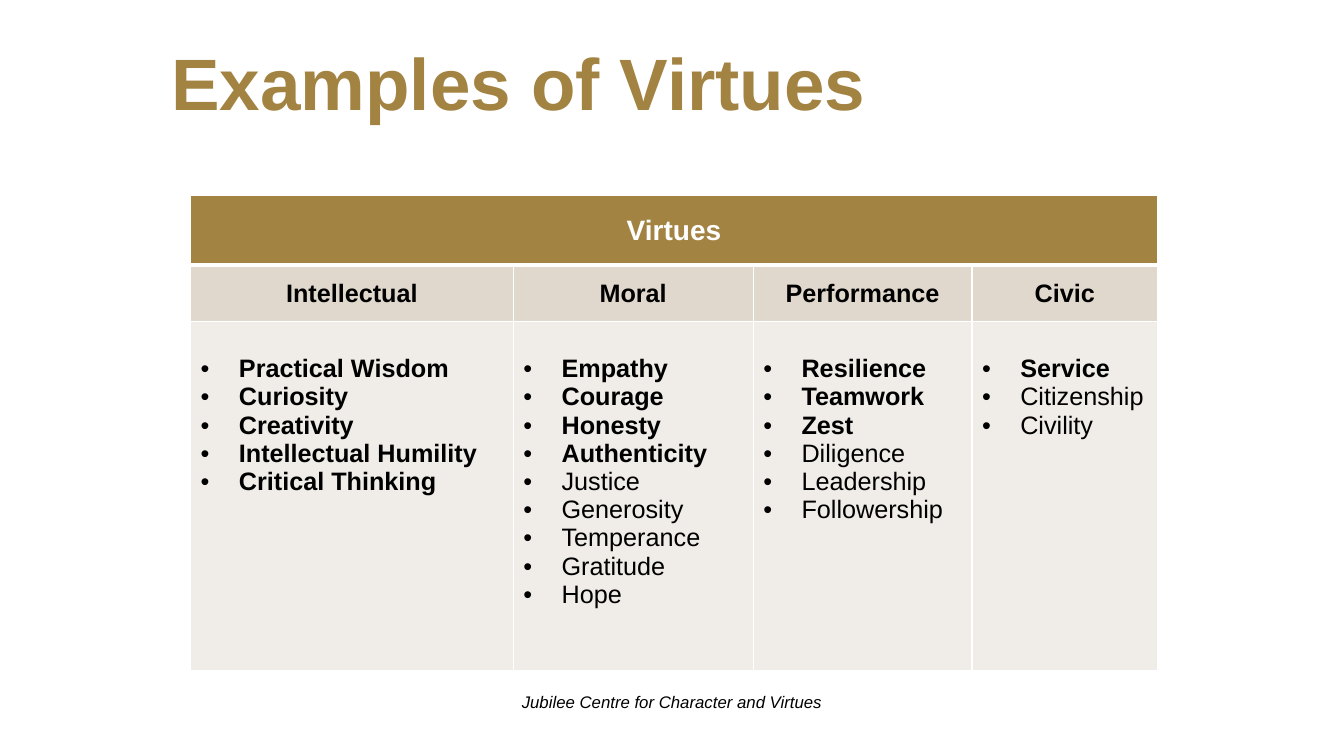
import pptx
import pptx.util
import pptx.dml.color
import pptx.enum.text
import pptx.oxml
import pptx.oxml.ns
from lxml import etree

Inches, Pt = pptx.util.Inches, pptx.util.Pt
PP_ALIGN, ANCHOR = pptx.enum.text.PP_ALIGN, pptx.enum.text.MSO_ANCHOR
qn = pptx.oxml.ns.qn

# Content: heading, column width, bold virtues, plain virtues
TITLE = "Examples of Virtues"
HEADER = "Virtues"
COLUMNS = [
    ("Intellectual", 3.2,
     ["Practical Wisdom", "Curiosity", "Creativity", "Intellectual Humility",
      "Critical Thinking"], []),
    ("Moral", 2.38,
     ["Empathy", "Courage", "Honesty", "Authenticity"],
     ["Justice", "Generosity", "Temperance", "Gratitude", "Hope"]),
    ("Performance", 2.17,
     ["Resilience", "Teamwork", "Zest"],
     ["Diligence", "Leadership", "Followership"]),
    ("Civic", 1.84, ["Service"], ["Citizenship", "Civility"]),
]
CREDIT = "Jubilee Centre for Character and Virtues"

ROW_HEIGHTS = [0.69, 0.56, 3.46]
ROW_FILLS = ["A38342", "E0D8CD", "F0ECE8"]
GOLD, WHITE, BLACK = "A38342", "FFFFFF", "000000"


def color(hex_code):
    return pptx.dml.color.RGBColor.from_string(hex_code)


def write(p, text, size, hex_code, bold=False, italic=False, align=PP_ALIGN.LEFT):
    p.text = text
    p.alignment = align
    font = p.runs[0].font
    font.name, font.size = "Arial", Pt(size)
    font.bold, font.italic = bold, italic
    font.color.rgb = color(hex_code)


def add_bullet(p):
    pPr = p._p.get_or_add_pPr()
    pPr.set("marL", str(Inches(0.38)))
    pPr.set("indent", str(-Inches(0.38)))
    bu_color = etree.SubElement(pPr, qn("a:buClr"))
    etree.SubElement(bu_color, qn("a:srgbClr"), val=BLACK)
    etree.SubElement(pPr, qn("a:buFont"), typeface="Arial")
    etree.SubElement(pPr, qn("a:buChar"), char="•")


def add_borders(cell, top, bottom):
    tcPr = cell._tc.get_or_add_tcPr()
    widths = [("a:lnL", 1), ("a:lnR", 1), ("a:lnT", top), ("a:lnB", bottom)]
    for i, (tag, width) in enumerate(widths):
        ln = etree.Element(qn(tag), w=str(Pt(width)))
        fill = etree.SubElement(ln, qn("a:solidFill"))
        etree.SubElement(fill, qn("a:srgbClr"), val=WHITE)
        tcPr.insert(i, ln)


prs = pptx.Presentation()
prs.slide_width, prs.slide_height = Inches(13.33), Inches(7.5)
s = prs.slides.add_slide(prs.slide_layouts[5])

# Title
title = s.shapes.title
title.left, title.top = Inches(1.6), Inches(0.38)
title.width, title.height = Inches(10.82), Inches(0.96)
tf = title.text_frame
tf.vertical_anchor = ANCHOR.MIDDLE
write(tf.paragraphs[0], TITLE, 52, GOLD, bold=True)
tf.paragraphs[0].line_spacing = 0.9

# Table grid
table = s.shapes.add_table(len(ROW_HEIGHTS), len(COLUMNS), Inches(1.89), Inches(1.94),
                           Inches(9.59), Inches(sum(ROW_HEIGHTS))).table
for row, height in zip(table.rows, ROW_HEIGHTS):
    row.height = Inches(height)
for r, fill in enumerate(ROW_FILLS):
    for c in range(len(COLUMNS)):
        cell = table.cell(r, c)
        cell.fill.solid()
        cell.fill.fore_color.rgb = color(fill)
        add_borders(cell, 3 if r == 1 else 1, 3 if r == 0 else 1)

# Header row
header = table.cell(0, 0)
header.merge(table.cell(0, len(COLUMNS) - 1))
header.vertical_anchor = ANCHOR.MIDDLE
write(header.text_frame.paragraphs[0], HEADER, 20, WHITE, bold=True, align=PP_ALIGN.CENTER)

# Headings and virtue lists
for c, (heading, width, bold_items, plain_items) in enumerate(COLUMNS):
    table.columns[c].width = Inches(width)
    cell = table.cell(1, c)
    cell.vertical_anchor = ANCHOR.MIDDLE
    write(cell.text_frame.paragraphs[0], heading, 18, BLACK, bold=True, align=PP_ALIGN.CENTER)

    cell = table.cell(2, c)
    cell.margin_top = Inches(0.33)
    tf = cell.text_frame
    for i, item in enumerate(bold_items + plain_items):
        p = tf.paragraphs[0] if i == 0 else tf.add_paragraph()
        add_bullet(p)
        write(p, item, 18, BLACK, bold=i < len(bold_items))

# Credit line
sp = s.shapes.add_textbox(Inches(2.27), Inches(6.81), Inches(8.79), Inches(0.3))
sp.text_frame.word_wrap = True
write(sp.text_frame.paragraphs[0], CREDIT, 12, BLACK, italic=True, align=PP_ALIGN.CENTER)

prs.save("out.pptx")
